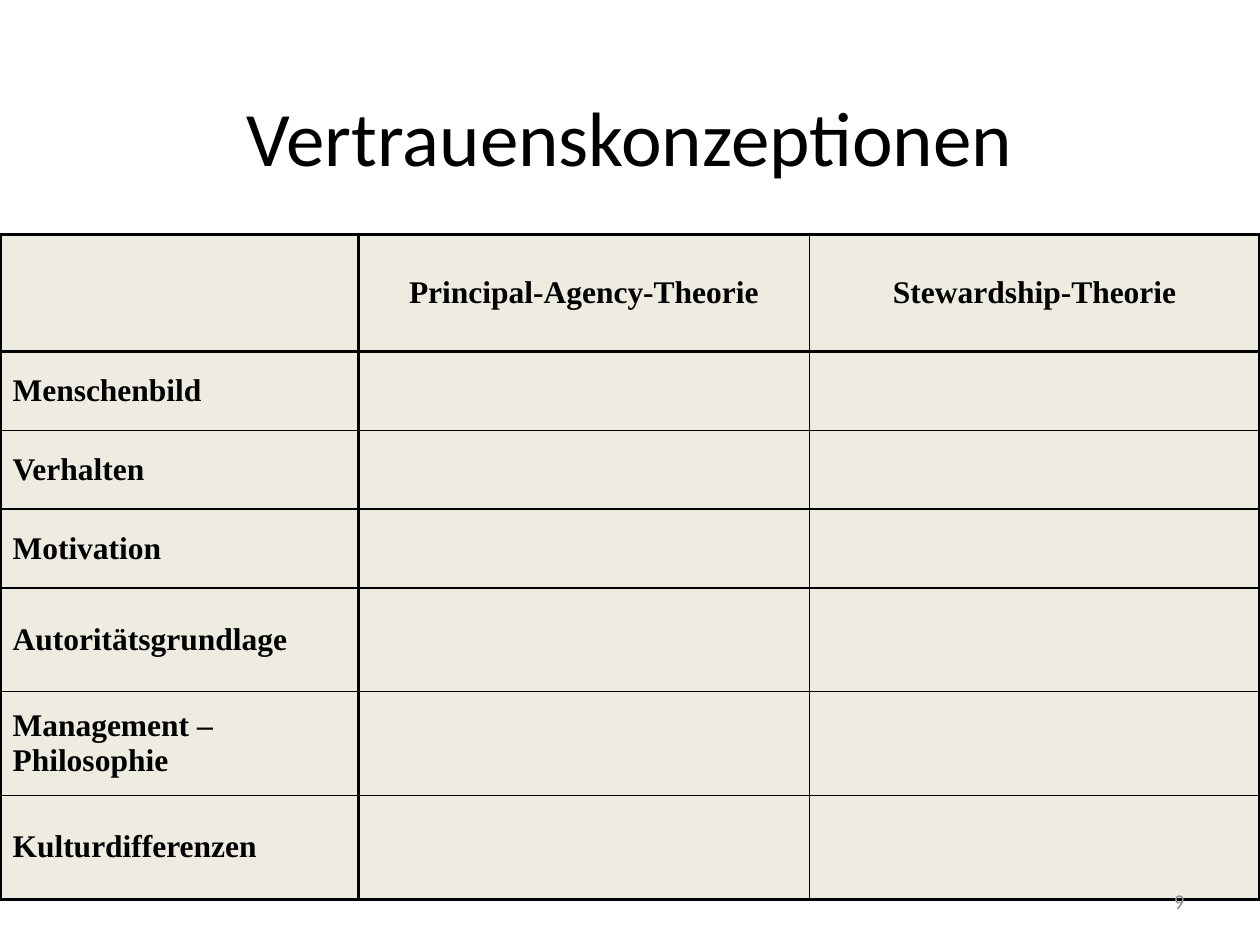
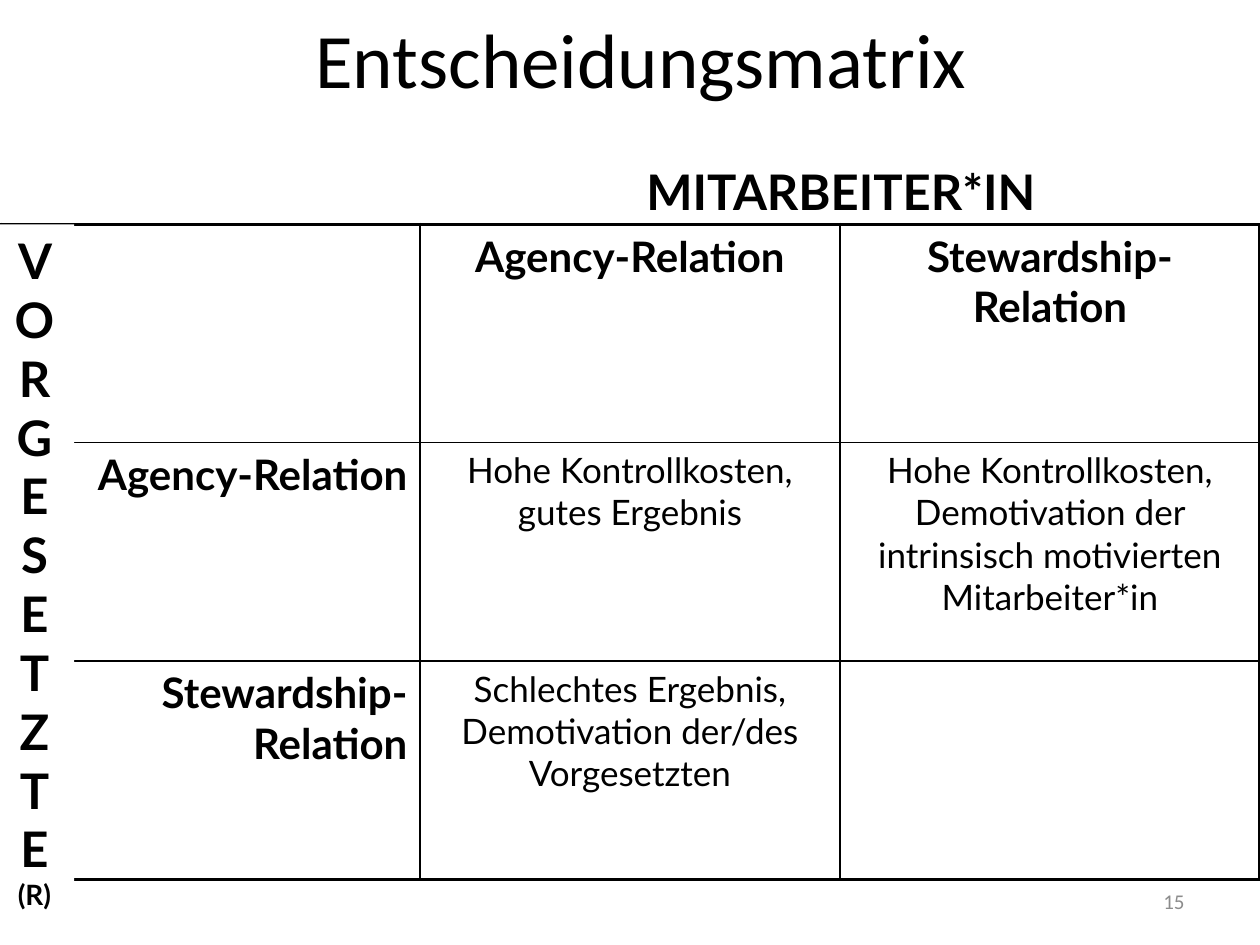
from lxml import etree
from pptx import Presentation
from pptx.dml.color import RGBColor
from pptx.enum.shapes import MSO_SHAPE
from pptx.enum.text import MSO_ANCHOR, MSO_AUTO_SIZE, PP_ALIGN
from pptx.oxml.ns import qn
from pptx.util import Pt

BLACK = RGBColor(0x00, 0x00, 0x00)
WHITE = RGBColor(0xFF, 0xFF, 0xFF)
CREAM = RGBColor(0xEE, 0xEC, 0xE1)
GRAY = RGBColor(0x8C, 0x8C, 0x8C)
LEFT, CENTER, RIGHT, JUSTIFY = PP_ALIGN.LEFT, PP_ALIGN.CENTER, PP_ALIGN.RIGHT, PP_ALIGN.JUSTIFY
TOP, MIDDLE = MSO_ANCHOR.TOP, MSO_ANCHOR.MIDDLE
FIT = MSO_AUTO_SIZE.SHAPE_TO_FIT_TEXT
RECT = MSO_SHAPE.RECTANGLE
TITLE_ONLY = 5
THIN = 1
WIDTH, HEIGHT = 720, 540

TITLE = dict(name="Calibri", size=Pt(44))
NUMBER = dict(name="Calibri", size=Pt(12), color=GRAY)
TERM = dict(name="Times New Roman", size=Pt(18), bold=True)
AXIS = dict(name="Lato", size=Pt(28), bold=True)
AXIS_SMALL = dict(AXIS, size=Pt(16))
RELATION = dict(name="Lato", size=Pt(24), bold=True)
OUTCOME = dict(name="Lato", size=Pt(20), bold=False)

CONCEPTS = dict(
    rows=[
        ["", "Principal-Agency-Theorie", "Stewardship-Theorie"],
        ["Menschenbild", "", ""],
        ["Verhalten", "", ""],
        ["Motivation", "", ""],
        ["Autoritätsgrundlage", "", ""],
        ["Management –\nPhilosophie", "", ""],
        ["Kulturdifferenzen", "", ""],
    ],
    top=134, widths=[205, 257.5, 257.5], heights=[67] + [45] * 3 + [59.3] * 3,
    fill=CREAM, anchor=MIDDLE, label_align=JUSTIFY, label_font=TERM, body_font=TERM,
    thick=2, thick_rows={0, 1, 7}, thick_cols={0, 1, 3},
)
MATRIX = dict(
    rows=[
        ["", "Agency-Relation", "Stewardship-Relation"],
        ["Agency-Relation", "Hohe Kontrollkosten, gutes Ergebnis",
         "Hohe Kontrollkosten, Demotivation der intrinsisch motivierten Mitarbeiter*in"],
        ["Stewardship-Relation", "Schlechtes Ergebnis, Demotivation der/des Vorgesetzten", ""],
    ],
    top=128.2, widths=[WIDTH / 3] * 3, heights=[124.8] * 3,
    fill=WHITE, anchor=TOP, label_align=RIGHT, label_font=RELATION, body_font=OUTCOME,
    thick=2.25, thick_rows={0, 3}, thick_cols={0, 3},
)
COLUMN_AXIS = dict(box=(241, 88.6, 479, 41), runs=[("MITARBEITER*IN", AXIS)])
ROW_AXIS = dict(box=(-3, 128.2, 45.4, 402.5), runs=[("VORGESETZTE ", AXIS), ("(R)", AXIS_SMALL)])


def points(values):
    return [Pt(v) for v in values]


def add_run(p, text, color=BLACK, **style):
    r = p.add_run()
    r.text = text
    r.font.color.rgb = color
    for key, value in style.items():
        setattr(r.font, key, value)


def write(tf, text, align, style):
    for i, line in enumerate(text.split("\n")):
        p = tf.add_paragraph() if i else tf.paragraphs[0]
        p.alignment = align
        add_run(p, line, **style)


def add_title(prs, text, box):
    s = prs.slides.add_slide(prs.slide_layouts[TITLE_ONLY])
    sp = s.shapes.title
    sp.left, sp.top, sp.width, sp.height = points(box)
    sp.text_frame.vertical_anchor = MIDDLE
    write(sp.text_frame, text, CENTER, TITLE)
    return s


def add_number(s, text):
    tf = s.shapes.add_textbox(*points((516, 500.5, 168, 28.8))).text_frame
    tf.word_wrap = True
    tf.vertical_anchor = MIDDLE
    write(tf, text, RIGHT, NUMBER)


def add_axis(s, box, runs):
    sp = s.shapes.add_shape(RECT, *points(box))
    sp.shadow.inherit = False
    sp.fill.solid()
    sp.fill.fore_color.rgb = WHITE
    sp.line.fill.background()
    tf = sp.text_frame
    tf.word_wrap = True
    tf.auto_size = FIT
    tf.vertical_anchor = TOP
    p = tf.paragraphs[0]
    p.alignment = CENTER
    for text, style in runs:
        add_run(p, text, **style)


def add_borders(cell, widths):
    tcPr = cell._tc.get_or_add_tcPr()
    for side, width in zip("LRTB", widths):
        ln = etree.SubElement(tcPr, qn(f"a:ln{side}"), w=str(Pt(width)))
        fill = etree.SubElement(ln, qn("a:solidFill"))
        etree.SubElement(fill, qn("a:srgbClr"), val=str(BLACK))


def add_grid(s, rows, top, widths, heights, fill, anchor, label_align, label_font,
             body_font, thick, thick_rows, thick_cols):
    frame = s.shapes.add_table(len(rows), len(widths),
                               *points((0, top, WIDTH, sum(heights))))
    table = frame.table
    table.first_row = table.horz_banding = False
    for col, width in zip(table.columns, widths):
        col.width = Pt(width)
    for i, (texts, height) in enumerate(zip(rows, heights)):
        table.rows[i].height = Pt(height)
        for j, text in enumerate(texts):
            cell = table.cell(i, j)
            edges = [n in thick_cols for n in (j, j + 1)] + [n in thick_rows for n in (i, i + 1)]
            add_borders(cell, [thick if edge else THIN for edge in edges])
            cell.fill.solid()
            cell.fill.fore_color.rgb = fill
            cell.vertical_anchor = anchor
            if text:
                write(cell.text_frame, text, CENTER if j else label_align,
                      body_font if i and j else label_font)


def main():
    prs = Presentation()
    prs.slide_width, prs.slide_height = Pt(WIDTH), Pt(HEIGHT)

    s = add_title(prs, "Vertrauenskonzeptionen", (36, 23, 648, 108.7))
    add_grid(s, **CONCEPTS)
    add_number(s, "9")

    s = add_title(prs, "Entscheidungsmatrix", (42.5, 0, 648, 65.5))
    add_axis(s, **COLUMN_AXIS)
    add_grid(s, **MATRIX)
    add_axis(s, **ROW_AXIS)
    add_number(s, "15")

    prs.save("out.pptx")


if __name__ == "__main__":
    main()
